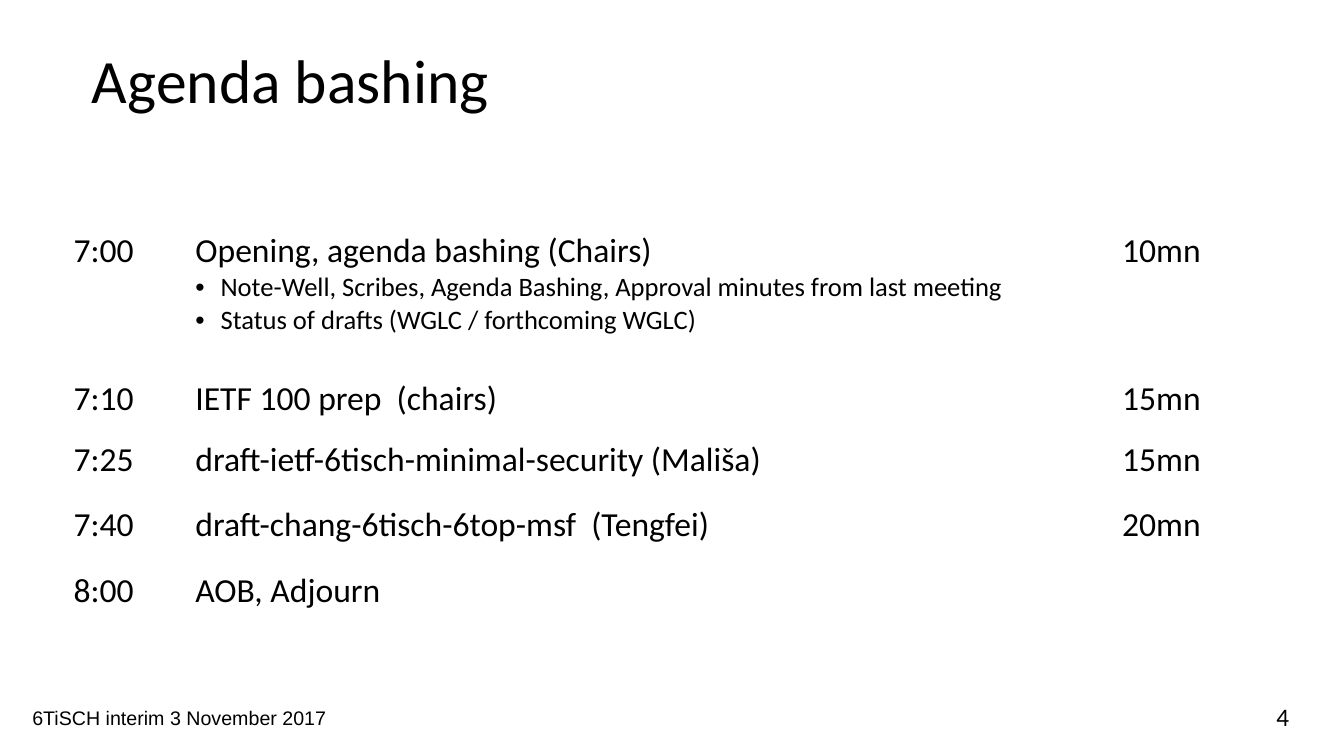
"""Build the agenda slide of the 6TiSCH interim meeting."""
from lxml.etree import SubElement
from pptx import Presentation
from pptx.dml.color import RGBColor
from pptx.enum.text import MSO_ANCHOR, PP_ALIGN
from pptx.oxml.ns import qn
from pptx.util import Pt

COLORS = {"text": "000000", "cell": "FFFFFF"}
AGENDA = [
    ("7:00", ["Opening, agenda bashing (Chairs)",
              "Note-Well, Scribes, Agenda Bashing, Approval minutes from last meeting",
              "Status of drafts (WGLC / forthcoming WGLC)"], "10mn"),
    ("7:10", ["IETF 100 prep  (chairs)"], "15mn"),
    ("7:25", ["draft-ietf-6tisch-minimal-security (Mališa)"], "15mn"),
    ("7:40", ["draft-chang-6tisch-6top-msf  (Tengfei)"], "20mn"),
    ("8:00", ["AOB, Adjourn"], ""),
]
COLUMN_WIDTHS = [87, 662, 85.5]
ROW_HEIGHTS = [106, 43, 47, 47, 47]


def add_run(p, text, size, font="Calibri"):
    r = p.add_run()
    r.text = text
    r.font.name = font
    r.font.size = Pt(size)
    r.font.bold = False
    r.font.color.rgb = RGBColor.from_string(COLORS["text"])


def add_bullet(p):
    pPr = p._p.get_or_add_pPr()
    pPr.set("marL", str(Pt(18)))
    pPr.set("indent", str(-Pt(18)))
    SubElement(pPr, qn("a:buFont"), typeface="Arial")
    SubElement(pPr, qn("a:buChar"), char="•")


prs = Presentation()
prs.slide_width, prs.slide_height = Pt(960), Pt(540)
s = prs.slides.add_slide(prs.slide_layouts[5])

title = s.shapes.title
title.left, title.top, title.width, title.height = Pt(58.5), Pt(8), Pt(828), Pt(104)
tf = title.text_frame
tf.vertical_anchor = MSO_ANCHOR.MIDDLE
p = tf.paragraphs[0]
p.alignment = PP_ALIGN.LEFT
p.line_spacing = 0.9
add_run(p, "Agenda bashing", 44)

table = s.shapes.add_table(len(AGENDA), len(COLUMN_WIDTHS),
                           Pt(43), Pt(160), Pt(834.5), Pt(290)).table
for column, width in zip(table.columns, COLUMN_WIDTHS):
    column.width = Pt(width)
for row, height, (start, topics, duration) in zip(table.rows, ROW_HEIGHTS, AGENDA):
    row.height = Pt(height)
    for cell, lines in zip(row.cells, ([start], topics, [duration])):
        cell.fill.solid()
        cell.fill.fore_color.rgb = RGBColor.from_string(COLORS["cell"])
        cell.margin_left = cell.margin_right = Pt(9.6)
        cell.margin_top = cell.margin_bottom = Pt(4.8)
        tf = cell.text_frame
        for i, line in enumerate(lines):
            p = tf.add_paragraph() if i else tf.paragraphs[0]
            if i:
                add_bullet(p)
            if line:
                add_run(p, line, 19 if i else 24)

for text, left, top, width, height, size, font, align in [
    ("6TiSCH interim 3 November 2017", 16, 500.5, 240, 24.5, 14, "Arial", PP_ALIGN.LEFT),
    ("4", 712, 497.5, 216, 29, 18, "Calibri", PP_ALIGN.RIGHT),
]:
    tf = s.shapes.add_textbox(Pt(left), Pt(top), Pt(width), Pt(height)).text_frame
    tf.word_wrap = True
    p = tf.paragraphs[0]
    p.alignment = align
    add_run(p, text, size, font)

prs.save("out.pptx")
